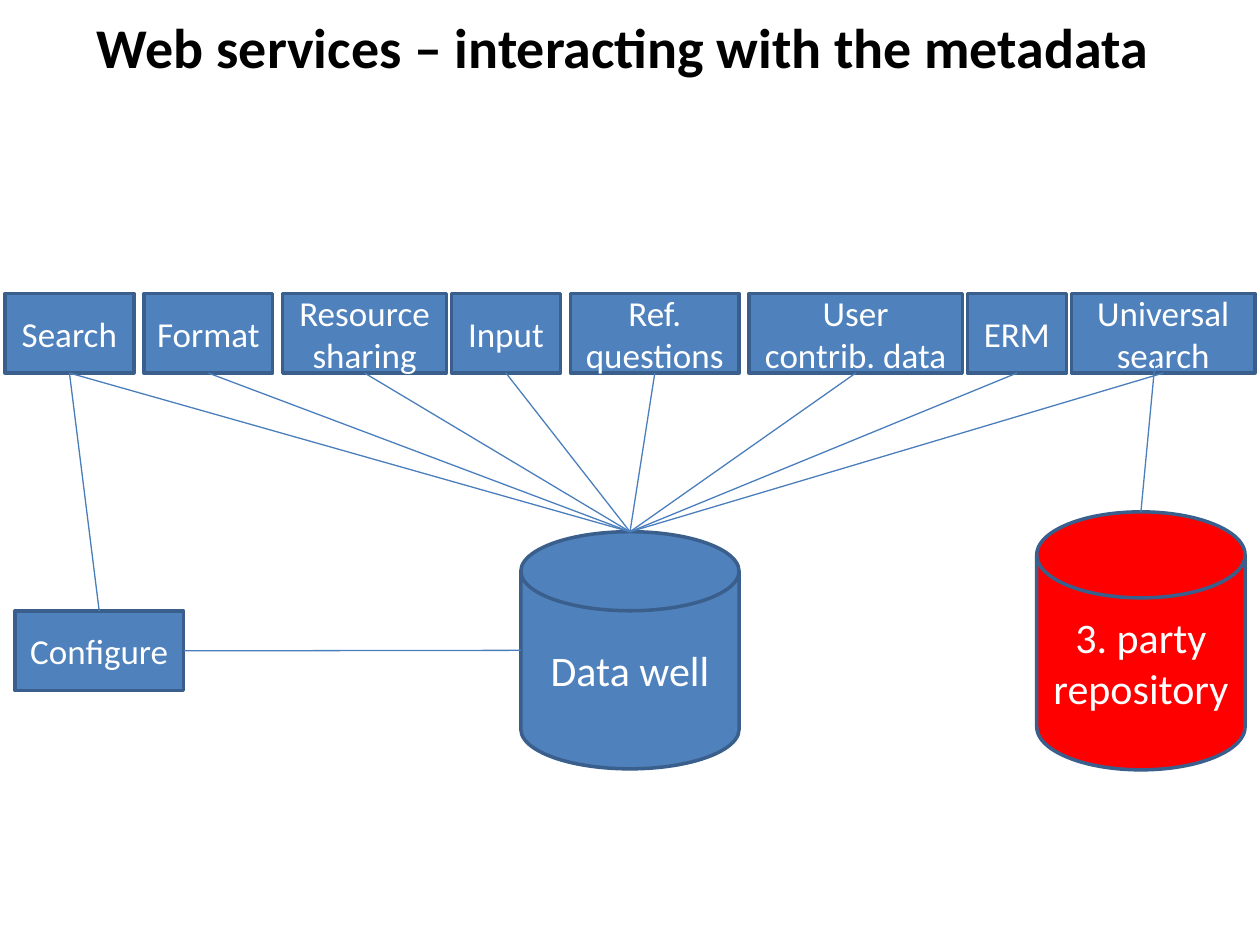
"""Builds the slide on web services interacting with the metadata."""
from dataclasses import dataclass

from lxml import etree
from pptx import Presentation
from pptx import util as u
from pptx.dml.color import RGBColor
from pptx.enum import shapes, text
from pptx.oxml.ns import qn

TOP, LEFT, BOTTOM, RIGHT = range(4)


@dataclass(frozen=True)
class Theme:
    """Colours, font and sizes of the slide."""
    blue: str = "4F81BD"
    red: str = "FF0000"
    outline: str = "3A5F8C"
    link: str = "4B7EBC"
    white: str = "FFFFFF"
    black: str = "000000"
    font: str = "Calibri"
    title_size: int = 32
    store_size: int = 24
    service_size: int = 20
    outline_width: float = 2
    link_width: float = 0.75


class Diagram:
    """Draws diagram elements on one slide in one style."""

    def __init__(self, slide, theme):
        """Keep the slide and its style."""
        self.slide = slide
        self.theme = theme

    def label(self, frame, words, size, color, align, bold=False):
        """Fill a text frame, one paragraph per line."""
        frame.text = words
        for paragraph in frame.paragraphs:
            paragraph.alignment = align
            paragraph.font.name = self.theme.font
            paragraph.font.size = u.Pt(size)
            paragraph.font.bold = bold
            paragraph.font.color.rgb = RGBColor.from_string(color)

    def title(self, words, left, top, width, height):
        """Place the slide title."""
        heading = self.slide.shapes.title
        heading.left, heading.top = u.Cm(left), u.Cm(top)
        heading.width, heading.height = u.Cm(width), u.Cm(height)
        frame = heading.text_frame
        self.label(frame, words, self.theme.title_size, self.theme.black,
                   text.PP_ALIGN.LEFT, bold=True)
        frame.word_wrap = False
        frame.auto_size = text.MSO_AUTO_SIZE.SHAPE_TO_FIT_TEXT
        frame.vertical_anchor = text.MSO_ANCHOR.TOP

    def block(self, kind, words, left, top, width, height, fill, size):
        """Add an outlined shape with centred text."""
        block = self.slide.shapes.add_shape(
            kind, u.Cm(left), u.Cm(top), u.Cm(width), u.Cm(height))
        block.shadow.inherit = False
        block.fill.solid()
        block.fill.fore_color.rgb = RGBColor.from_string(fill)
        block.line.color.rgb = RGBColor.from_string(self.theme.outline)
        block.line.width = u.Pt(self.theme.outline_width)
        block.text_frame.vertical_anchor = text.MSO_ANCHOR.MIDDLE
        self.label(block.text_frame, words, size, self.theme.white,
                   text.PP_ALIGN.CENTER)
        return block

    def service(self, words, left, top, width, height=1.6):
        """Add a service box."""
        return self.block(shapes.MSO_SHAPE.RECTANGLE, words, left, top, width,
                          height, self.theme.blue, self.theme.service_size)

    def store(self, words, left, top, width, height, fill):
        """Add a data store cylinder."""
        return self.block(shapes.MSO_SHAPE.FLOWCHART_MAGNETIC_DISK, words, left,
                          top, width, height, fill, self.theme.store_size)

    def link(self, start, end, source=None, target=None):
        """Add a thin line; source and target are (box, side) joints."""
        link = self.slide.shapes.add_connector(
            shapes.MSO_CONNECTOR.STRAIGHT, *start, *end)
        if source:
            link.begin_connect(*source)
        if target:
            link.end_connect(*target)
        link.line.color.rgb = RGBColor.from_string(self.theme.link)
        link.line.width = u.Pt(self.theme.link_width)
        etree.SubElement(link._element.spPr, qn("a:effectLst"))


def top_middle(block):
    """Return the middle of a block's top side."""
    return block.left + block.width // 2, block.top


def main():
    """Build and save the slide."""
    theme = Theme()
    deck = Presentation()
    deck.slide_width, deck.slide_height = u.Cm(25.4), u.Cm(19.05)
    diagram = Diagram(deck.slides.add_slide(deck.slide_layouts[5]), theme)
    diagram.title("Web services – interacting with the metadata",
                  1.7, 0.13, 21.92, 1.62)

    data_well = diagram.store("Data well", 10.5, 10.72, 4.4, 4.78, theme.blue)
    services = [
        diagram.service(words, left, 5.92, width)
        for words, left, width in (
            ("Search", 0.1, 2.6),
            ("Format", 2.9, 2.6),
            ("Resource\nsharing", 5.7, 3.3),
            ("Input", 9.1, 2.2),
            ("Ref.\nquestions", 11.5, 3.4),
            ("User\ncontrib. data", 15.1, 4.3),
            ("ERM", 19.5, 2),
            ("Universal\nsearch", 21.6, 3.7),
        )
    ]
    well_top = top_middle(data_well)
    for service in services:
        diagram.link(well_top, well_top, target=(service, BOTTOM))

    configure = diagram.service("Configure", 0.3, 12.32, 3.4)
    diagram.link(well_top, well_top, (services[0], BOTTOM), (configure, TOP))
    well_side = data_well.left, data_well.top + data_well.height // 2
    diagram.link(well_side, well_side, source=(configure, RIGHT))

    repository = diagram.store("3. party repository", 20.9, 10.32, 4.2, 5.2,
                               theme.red)
    diagram.link((u.Cm(23.3), u.Cm(7.14)), top_middle(repository))
    deck.save("out.pptx")


if __name__ == "__main__":
    main()
